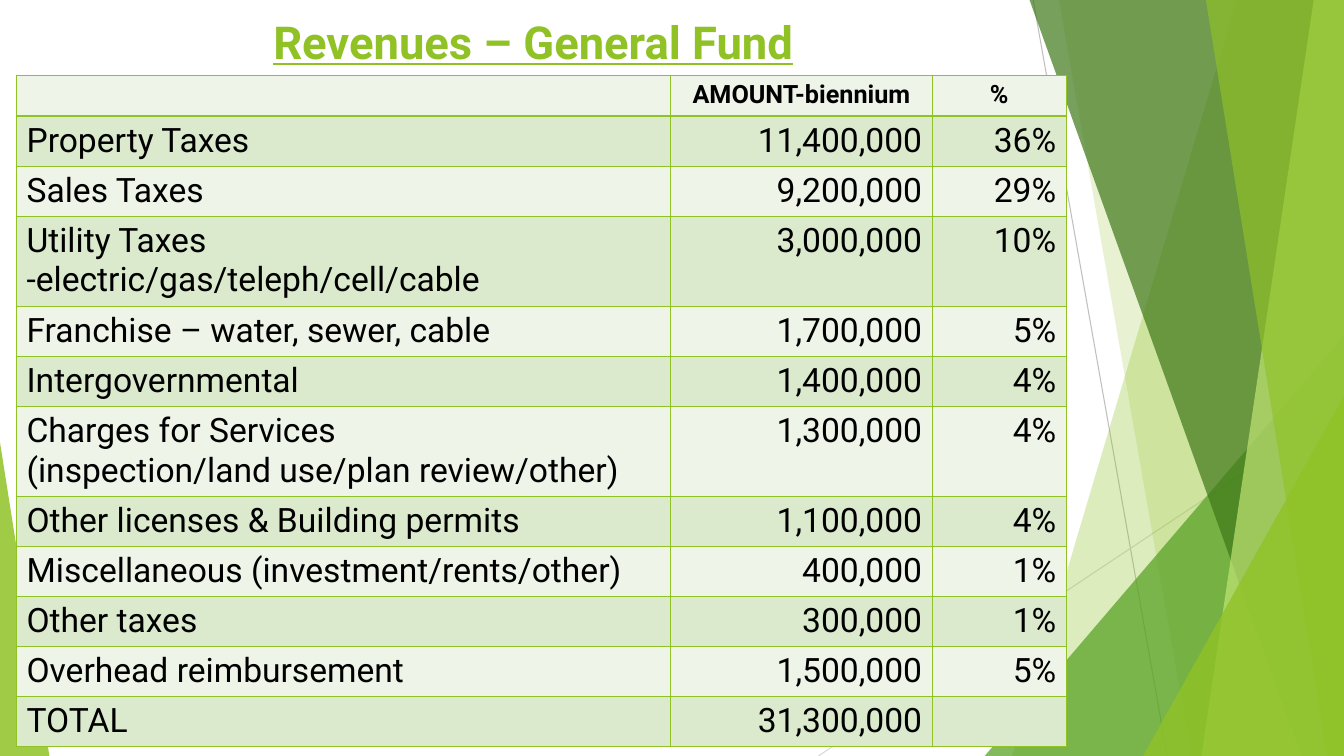
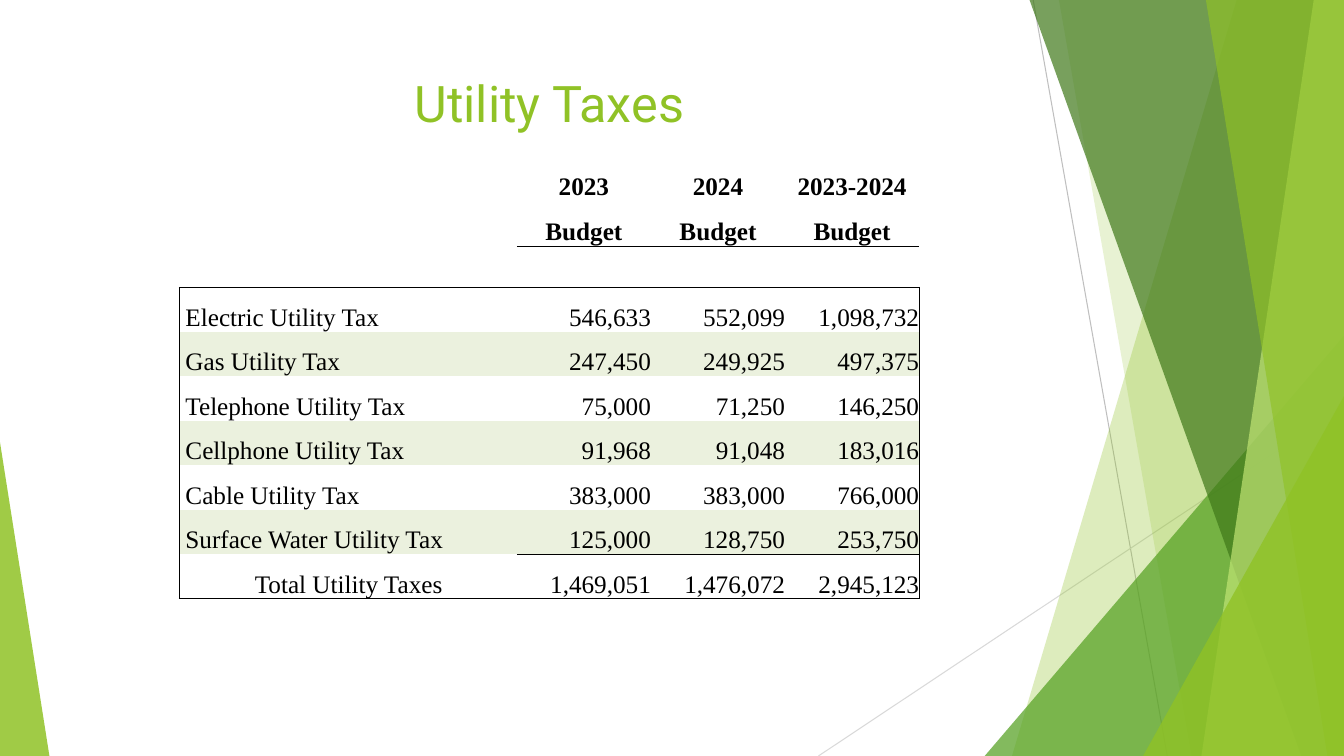
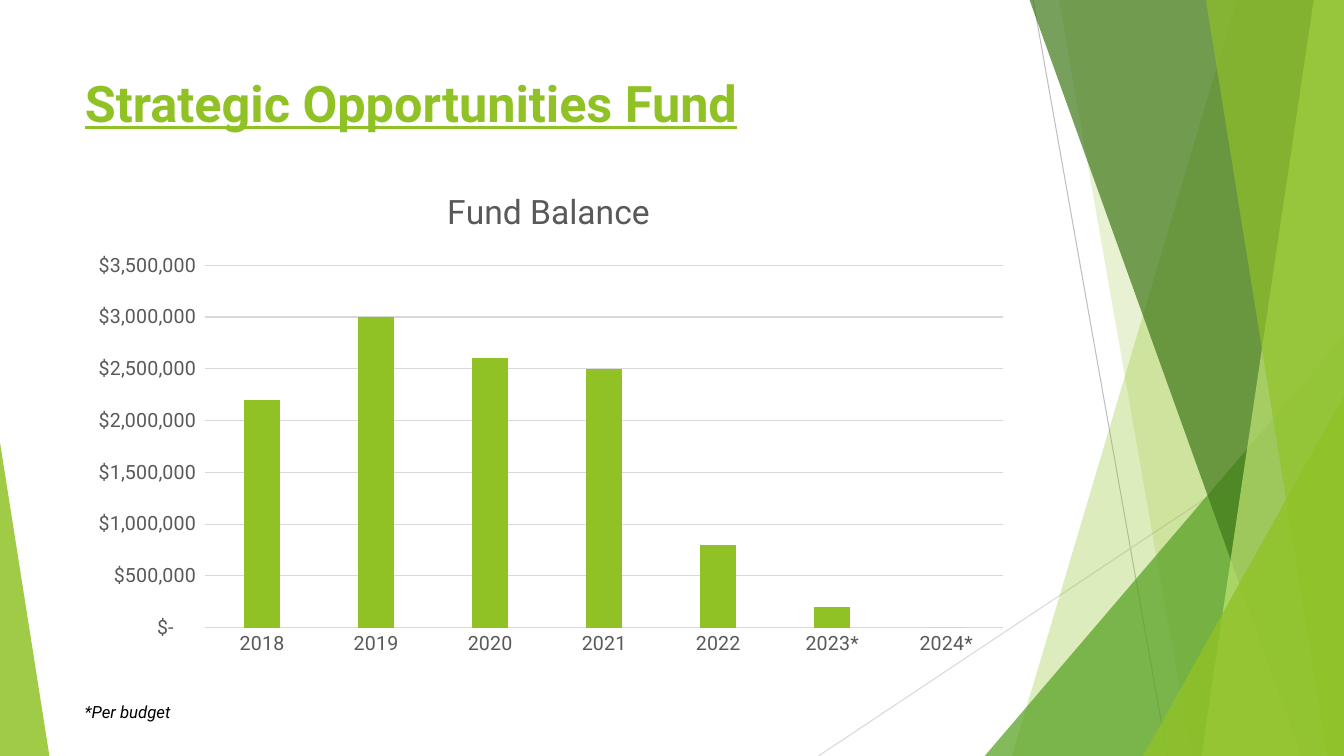
from dataclasses import dataclass

from lxml.etree import SubElement
from pptx import Presentation
from pptx.chart.data import CategoryChartData
from pptx.dml.color import RGBColor as RGB
from pptx.enum.chart import XL_CHART_TYPE as CHART, XL_TICK_MARK as TICK
from pptx.enum.shapes import MSO_CONNECTOR as CONN, MSO_SHAPE as SHAPE
from pptx.enum.text import MSO_ANCHOR as ANCHOR, MSO_AUTO_SIZE as FIT, PP_ALIGN as ALIGN
from pptx.oxml.ns import qn
from pptx.util import Pt


@dataclass(frozen=True)
class Theme:
    lime: str = "90C226"
    green: str = "54A021"
    forest: str = "3F7819"
    pale: str = "C0E474"
    black: str = "000000"
    grey: str = "595959"
    rule: str = "D9D9D9"
    dark_rule: str = "BFBFBF"
    band_light: str = "EEF4E8"
    band_dark: str = "DBE9CD"
    band_utility: str = "EBF1DE"
    sans: str = "Roboto"
    serif: str = "Times New Roman"
    title: float = 36
    title_small: float = 32.4
    cell: float = 24
    head: float = 18
    axis: float = 14
    note: float = 12


T = Theme()
NO_GRID = "{2D5ABB26-0587-4C30-8999-92F81FD0307C}"
DOLLARS = '_("$"* #,##0_);_("$"* \\(#,##0\\);_("$"* "-"??_);_(@_)'


def put(obj, **values):
    for name, value in values.items():
        setattr(obj, name, value)


def style(font, size, color=T.black, name=T.sans, **flags):
    put(font, size=Pt(size), name=name, **flags)
    font.color.rgb = RGB.from_string(color)


class Deck:
    """Holds the presentation, its theme and the slide being filled."""

    def __init__(self):
        self.prs = Presentation()
        put(self.prs, slide_width=Pt(960), slide_height=Pt(540))
        self.s = None

    def slide(self, text, box, size=T.title, align=ALIGN.CENTER, **flags):
        self.s = self.prs.slides.add_slide(self.prs.slide_layouts[5])
        sp = self.s.shapes.title
        self.place(sp, box)
        tf = sp.text_frame
        put(tf, text=text, auto_size=FIT.NONE, vertical_anchor=ANCHOR.TOP, word_wrap=True)
        p = tf.paragraphs[0]
        p.alignment = align
        style(p.runs[0].font, size, T.lime, **flags)

    def place(self, sp, box):
        put(sp, **dict(zip(("left", "top", "width", "height"), map(Pt, box))))

    def paint(self, sp, color, alpha):
        sp.shadow.inherit = False
        sp.fill.solid()
        sp.fill.fore_color.rgb = RGB.from_string(color)
        sp.line.fill.background()
        clr = sp.element.spPr.find(qn("a:solidFill"))[0]
        SubElement(clr, qn("a:alpha"), val=str(alpha * 1000))

    def line(self, ends, color):
        sp = self.s.shapes.add_connector(CONN.STRAIGHT, *map(Pt, ends))
        sp.line.color.rgb = RGB.from_string(color)
        sp.line.width = Pt(0.75)
        SubElement(sp.element.spPr, qn("a:effectLst"))

    def ray(self, top, bottom, color, alpha):
        fb = self.s.shapes.build_freeform(Pt(top), 0)
        corners = (960, 0), (960, 540), (bottom, 540)
        fb.add_line_segments([(Pt(x), Pt(y)) for x, y in corners], close=True)
        self.paint(fb.convert_to_shape(), color, alpha)

    def wedge(self, box, peak, color, alpha):
        sp = self.s.shapes.add_shape(SHAPE.ISOSCELES_TRIANGLE, *map(Pt, box))
        sp.adjustments[0] = peak
        self.paint(sp, color, alpha)

    def backdrop(self):
        self.line((738, 0, 833.8, 540), T.dark_rule)
        self.line((960, 290.2, 584.6, 540), T.rule)
        self.ray(883.4, 722.9, T.lime, 30)
        self.ray(756.4, 851, T.lime, 20)
        self.wedge((703.4, 239.8, 256.6, 300.2), 1, T.green, 72)
        self.ray(735.4, 929.5, T.forest, 70)
        self.ray(938.4, 858.2, T.pale, 70)
        self.ray(861.4, 948.2, T.lime, 65)
        self.wedge((816.5, 283, 143.5, 257), 1, T.lime, 80)
        self.wedge((0, 316, 35.3, 224), 0, T.lime, 85)
        tree = self.prs.slide_master.shapes.element
        drawn = [sp.element for sp in self.s.shapes if not sp.is_placeholder]
        for i, el in enumerate(drawn):
            el.xpath("./*/p:cNvPr")[0].set("id", str(100 + i))
            tree.insert(2 + i, el)

    def border(self, cell, sides, color, width):
        pr = cell._tc.get_or_add_tcPr()
        for side in "LRTB":
            ln = SubElement(pr, qn(f"a:ln{side}"), w=str(Pt(width)))
            if side in sides:
                fill = SubElement(ln, qn("a:solidFill"))
                SubElement(fill, qn("a:srgbClr"), val=color)
            else:
                SubElement(ln, qn("a:noFill"))

    def table(self, at, cols, heights, rows, edges, edge, fills, font, cell_format=None):
        size = Pt(sum(cols)), Pt(sum(heights))
        shape = self.s.shapes.add_table(len(rows), len(cols), *map(Pt, at), *size)
        tb = shape.table
        put(tb, first_row=False, horz_banding=False)
        tb._tbl.tblPr.find(qn("a:tableStyleId")).text = NO_GRID
        for col, width in zip(tb.columns, cols):
            col.width = Pt(width)
        for i, (row, height, values) in enumerate(zip(tb.rows, heights, rows)):
            row.height = Pt(height)
            for j, (cell, text) in enumerate(zip(row.cells, values)):
                self.border(cell, edges(i, j), *edge)
                if fills(i):
                    cell.fill.solid()
                    cell.fill.fore_color.rgb = RGB.from_string(fills(i))
                else:
                    cell.fill.background()
                put(cell, **(cell_format(i, j) if cell_format else {}))
                if text:
                    cell.text = text
                head = not values[0]
                for p in cell.text_frame.paragraphs:
                    p.alignment = ALIGN.CENTER if head else ALIGN.RIGHT if j else ALIGN.LEFT
                    for r in p.runs:
                        style(r.font, bold=head, **font(i))

    def chart(self, box, title, cats, values):
        data = CategoryChartData(number_format=DOLLARS)
        data.categories = cats
        data.add_series("Series 1", values)
        ch = self.s.shapes.add_chart(CHART.COLUMN_CLUSTERED, *map(Pt, box), data).chart
        put(ch, has_legend=False, has_title=True)
        style(ch.font, T.axis, T.grey)
        tf = ch.chart_title.text_frame
        tf.text = title
        style(tf.paragraphs[0].runs[0].font, T.cell, T.grey, bold=False)
        ch.chart_title.include_in_layout = False
        plot = ch.plots[0]
        put(plot, gap_width=219, overlap=-27, vary_by_categories=False)
        fill = plot.series[0].format.fill
        fill.solid()
        fill.fore_color.rgb = RGB.from_string(T.lime)
        cat, val = ch.category_axis, ch.value_axis
        for axis in (cat, val):
            put(axis, major_tick_mark=TICK.NONE, minor_tick_mark=TICK.NONE)
            style(axis.tick_labels.font, T.axis, T.grey)
        put(val, minimum_scale=0, maximum_scale=3500000, major_unit=500000)
        put(val.tick_labels, number_format=DOLLARS, number_format_is_linked=False)
        val.format.line.fill.background()
        for ln in (cat.format.line, val.major_gridlines.format.line):
            ln.color.rgb = RGB.from_string(T.rule)
            ln.width = Pt(0.75)

    def note(self, text, box):
        tf = self.s.shapes.add_textbox(*map(Pt, box)).text_frame
        put(tf, text=text, word_wrap=True, auto_size=FIT.SHAPE_TO_FIT_TEXT)
        style(tf.paragraphs[0].runs[0].font, T.note, italic=True)


REVENUES = [
    ("", "AMOUNT-biennium", "%"),
    ("Property Taxes", "11,400,000", "36%"),
    ("Sales Taxes", "9,200,000", "29%"),
    ("Utility Taxes\n-electric/gas/teleph/cell/cable", "3,000,000", "10%"),
    ("Franchise – water, sewer, cable", "1,700,000", "5%"),
    ("Intergovernmental", "1,400,000", "4%"),
    ("Charges for Services\n(inspection/land use/plan review/other)", "1,300,000", "4%"),
    ("Other licenses & Building permits", "1,100,000", "4%"),
    ("Miscellaneous (investment/rents/other)", "400,000", "1%"),
    ("Other taxes", "300,000", "1%"),
    ("Overhead reimbursement", "1,500,000", "5%"),
    ("TOTAL", "31,300,000", ""),
]

UTILITIES = [
    ("", "", "2023", "2024", "2023-2024"),
    ("", "", "Budget", "Budget", "Budget"),
    ("", "", "", "", ""),
    ("Electric Utility Tax", "", "546,633", "552,099", "1,098,732"),
    ("Gas Utility Tax", "", "247,450", "249,925", "497,375"),
    ("Telephone Utility Tax", "", "75,000", "71,250", "146,250"),
    ("Cellphone Utility Tax", "", "91,968", "91,048", "183,016"),
    ("Cable Utility Tax", "", "383,000", "383,000", "766,000"),
    ("Surface Water Utility Tax", "", "125,000", "128,750", "253,750"),
    ("Total Utility Taxes", "", "1,469,051", "1,476,072", "2,945,123"),
]

BALANCES = {
    "2018": 2200000, "2019": 3000000, "2020": 2600000, "2021": 2500000,
    "2022": 800000, "2023*": 200000, "2024*": 0,
}


def utility_edges(row, col):
    ruled_from = {1: 2, 2: 0, 8: 2, 9: 0}
    tests = {
        "L": row > 2 and col == 0,
        "R": row > 2 and col == 4,
        "T": col >= ruled_from.get(row - 1, 5),
        "B": col >= ruled_from.get(row, 5),
    }
    return [side for side, shown in tests.items() if shown]


def utility_cell(row, col):
    indent = 0 if col else 54 if row == 9 else 4.5
    return dict(margin_left=Pt(indent), margin_right=0, margin_top=0, margin_bottom=0,
                vertical_anchor=ANCHOR.BOTTOM)


def main():
    deck = Deck()

    deck.slide("Revenues – General Fund", (18, 6.5, 725.8, 47.5), T.title_small,
               bold=True, underline=True)
    deck.backdrop()
    deck.table(
        (11.8, 53.7), (467.3, 186.8, 95.8),
        [28.6] + [64.3 if "\n" in row[0] else 35.8 for row in REVENUES[1:]], REVENUES,
        edges=lambda i, j: "LRTB", edge=(T.lime, 1),
        fills=lambda i: T.band_dark if i % 2 else T.band_light,
        font=lambda i: dict(size=T.cell if i else T.head))

    deck.slide("Utility Taxes", (54, 48.2, 676.8, 103.7))
    deck.table(
        (128, 112), (218.9, 22.3, 95.8, 95.8, 95.8),
        [29.5 if i == 2 else 31.83 for i in range(len(UTILITIES))], UTILITIES,
        edges=utility_edges, edge=(T.black, 0.5),
        fills=lambda i: T.band_utility if i in (4, 6, 8) else None,
        font=lambda i: dict(size=T.head, name=T.serif), cell_format=utility_cell)

    deck.slide("Strategic Opportunities Fund", (53.4, 48, 676.8, 103.7),
               align=ALIGN.LEFT, bold=True, underline=True)
    deck.chart((53.4, 119.9, 676.8, 355.7), "Fund Balance",
               list(BALANCES), list(BALANCES.values()))
    deck.note("*Per budget", (53.4, 497.9, 126.7, 21.6))

    deck.prs.save("out.pptx")


if __name__ == "__main__":
    main()
